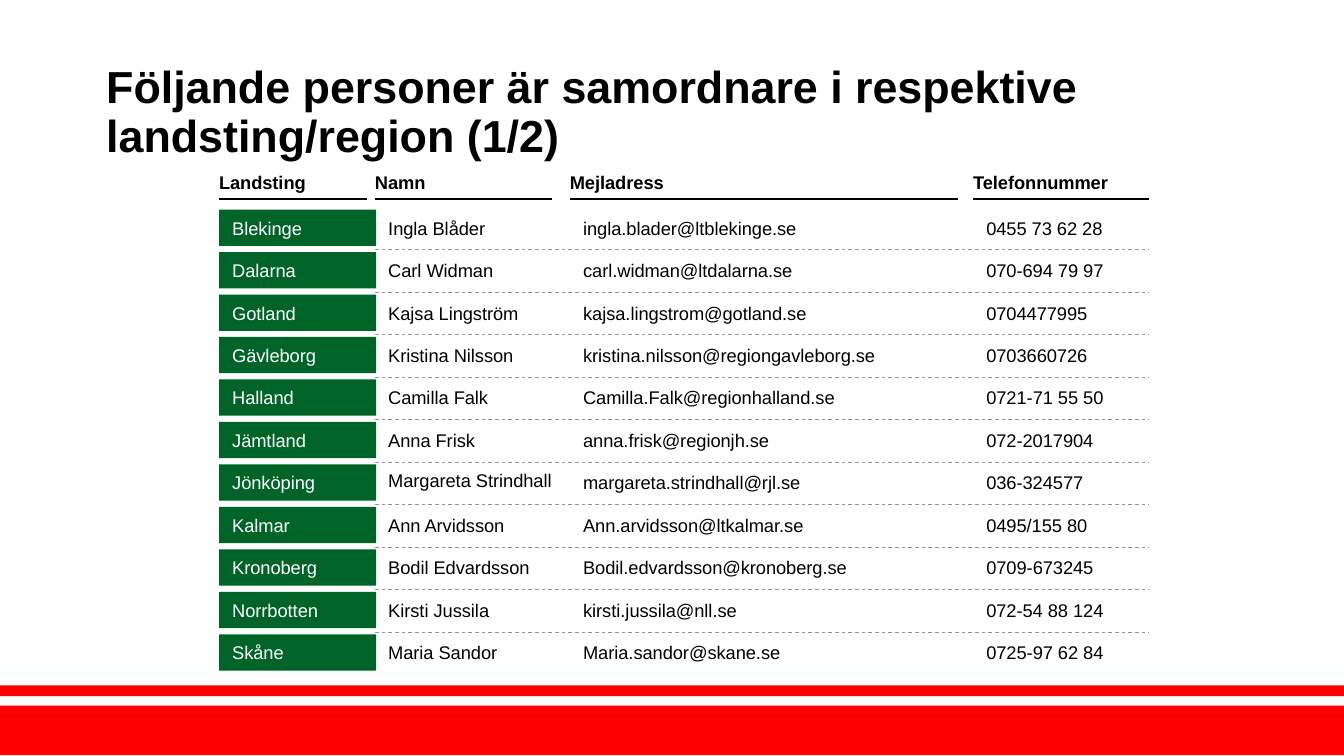
from lxml import etree
from pptx import Presentation
from pptx.dml.color import RGBColor
from pptx.enum.dml import MSO_LINE
from pptx.enum.shapes import MSO_CONNECTOR, MSO_SHAPE
from pptx.enum.text import MSO_ANCHOR, MSO_AUTO_SIZE, PP_ALIGN
from pptx.oxml.ns import qn
from pptx.util import Inches, Pt

RED, GREEN, GREY = "FF0000", "006428", "949494"
BLACK, WHITE = "000000", "FFFFFF"
ROW_H = 0.27

# Header, left offset and width of each column
COLUMNS = [
    ("Landsting", 0, 1.1),
    ("Namn", 1.16, 1.32),
    ("Mejladress", 2.61, 2.89),
    ("Telefonnummer", 5.61, 1.31),
]
COORDINATORS = [
    ("Blekinge", "Ingla Blåder", "ingla.blader@ltblekinge.se", "0455 73 62 28"),
    ("Dalarna", "Carl Widman", "carl.widman@ltdalarna.se", "070-694 79 97"),
    ("Gotland", "Kajsa Lingström", "kajsa.lingstrom@gotland.se", "0704477995"),
    ("Gävleborg", "Kristina Nilsson", "kristina.nilsson@regiongavleborg.se", "0703660726"),
    ("Halland", "Camilla Falk", "Camilla.Falk@regionhalland.se", "0721-71 55 50"),
    ("Jämtland", "Anna Frisk", "anna.frisk@regionjh.se", "072-2017904"),
    ("Jönköping", "Margareta Strindhall", "margareta.strindhall@rjl.se", "036-324577"),
    ("Kalmar", "Ann Arvidsson", "Ann.arvidsson@ltkalmar.se", "0495/155 80"),
    ("Kronoberg", "Bodil Edvardsson", "Bodil.edvardsson@kronoberg.se", "0709-673245"),
    ("Norrbotten", "Kirsti Jussila", "kirsti.jussila@nll.se", "072-54 88 124"),
    ("Skåne", "Maria Sandor", "Maria.sandor@skane.se", "0725-97 62 84"),
]
# Left, top, width and height of the name that needs a wider box
WIDE_NAMES = {"Margareta Strindhall": (2.79, 3.43, 1.44, 0.29)}


def rgb(color):
    return RGBColor.from_string(color)


def write(sp, text, size=9.75, color=BLACK, bold=False, anchor=MSO_ANCHOR.MIDDLE):
    tf = sp.text_frame
    tf.word_wrap = True
    tf.auto_size = MSO_AUTO_SIZE.NONE
    tf.vertical_anchor = anchor
    p = tf.paragraphs[0]
    p.alignment = PP_ALIGN.LEFT
    r = p.add_run()
    r.text = text
    for name, value in {"name": "Arial", "size": Pt(size), "bold": bold}.items():
        setattr(r.font, name, value)
    r.font.color.rgb = rgb(color)
    return tf


def add_text(slide, box, text, **style):
    return write(slide.shapes.add_textbox(*map(Inches, box)), text, **style)


def add_bar(slide, box, color):
    sp = slide.shapes.add_shape(MSO_SHAPE.RECTANGLE, *map(Inches, box))
    sp.shadow.inherit = False
    sp.fill.solid()
    sp.fill.fore_color.rgb = rgb(color)
    sp.line.fill.background()
    return sp


def add_rule(slide, x, y, width, color, weight, dash=None):
    ends = map(Inches, (x, y, x + width, y))
    line = slide.shapes.add_connector(MSO_CONNECTOR.STRAIGHT, *ends)
    line.line.color.rgb = rgb(color)
    line.line.width = Pt(weight)
    line.line.dash_style = dash
    etree.SubElement(line._element.spPr, qn("a:effectLst"))


def add_title(slide, box, text):
    title = slide.shapes.title
    title.left, title.top, title.width, title.height = map(Inches, box)
    tf = write(title, text, size=24, bold=True)
    tf.paragraphs[0].line_spacing = 0.9


def add_header(slide, box):
    left, top, _, height = box
    for text, dx, width in COLUMNS:
        tf = add_text(slide, (left + dx, top, width, 0.16), text,
                      bold=True, anchor=MSO_ANCHOR.BOTTOM)
        for side in ("left", "top", "right", "bottom"):
            setattr(tf, f"margin_{side}", 0)
        add_rule(slide, left + dx, top + height, width, BLACK, 0.75)


def add_rows(slide, box):
    left, top, width, height = box
    pitch = (height - ROW_H) / (len(COORDINATORS) - 1)
    name_dx = COLUMNS[1][1]
    for i, (region, *details) in enumerate(COORDINATORS):
        y = top + i * pitch
        write(add_bar(slide, (left, y, name_dx + 0.01, ROW_H), GREEN), region, color=WHITE)
        for (_, dx, col_w), text in zip(COLUMNS[1:], details):
            cell = WIDE_NAMES.get(text, (left + dx, y, col_w, ROW_H))
            add_text(slide, cell, text)
        if i < len(COORDINATORS) - 1:
            add_rule(slide, left + name_dx, y + 0.3, width - name_dx,
                     GREY, 0.5, MSO_LINE.DASH)


def main():
    prs = Presentation()
    # 16:9
    prs.slide_width, prs.slide_height = Inches(10), Inches(10 * 9 / 16)
    slide = prs.slides.add_slide(prs.slide_layouts[5])
    add_bar(slide, (0, 5.25, 10, 0.37), RED)
    add_bar(slide, (0, 5.1, 10, 0.08), RED)
    add_title(slide, (0.69, 0.3, 8.62, 1.09),
              "Följande personer är samordnare i respektive landsting/region (1/2)")
    add_header(slide, (1.63, 1.28, 6.92, 0.2))
    add_rows(slide, (1.63, 1.56, 6.92, 3.43))
    prs.save("out.pptx")


if __name__ == "__main__":
    main()
